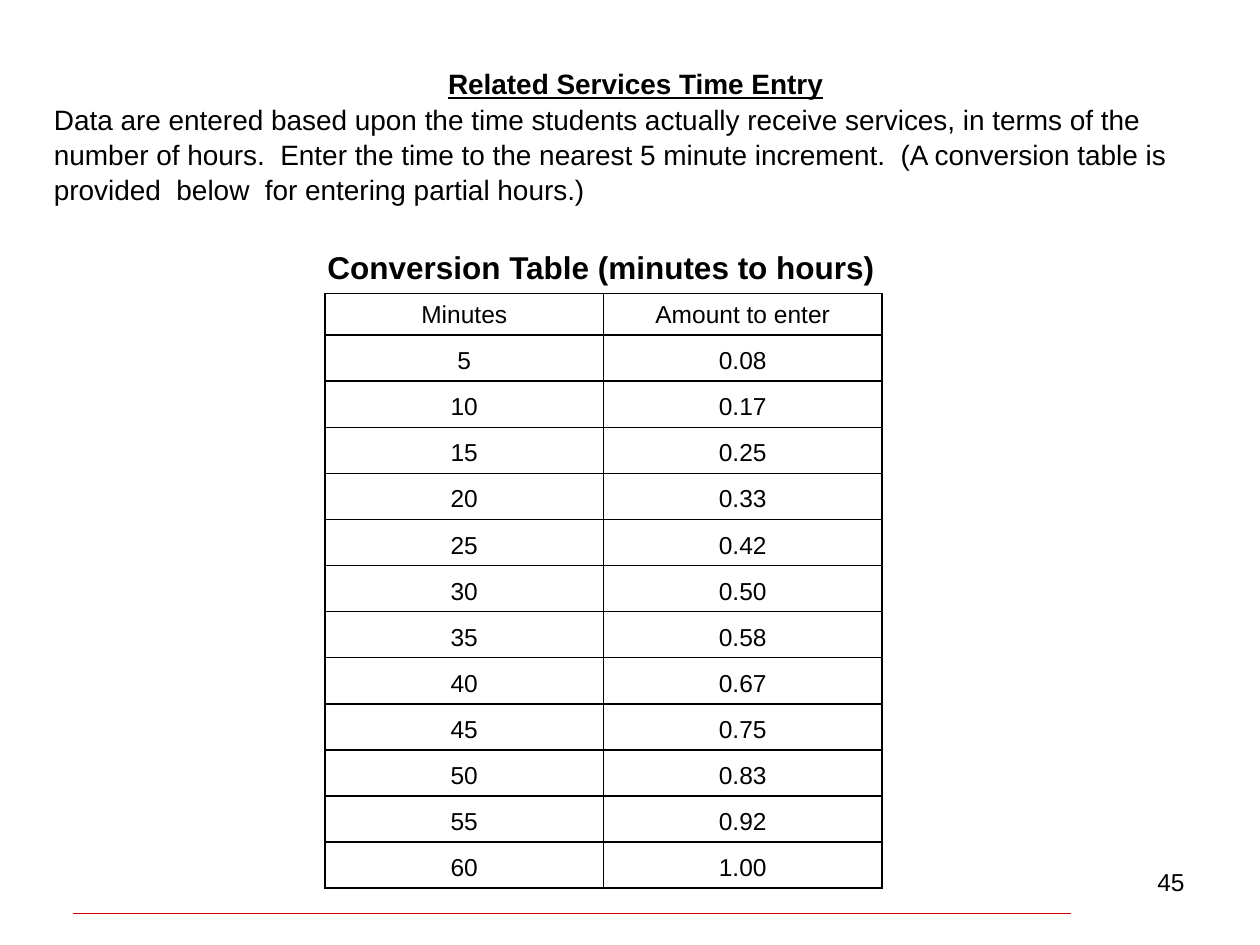
from dataclasses import dataclass

from lxml.etree import SubElement
from pptx import Presentation
from pptx.dml.color import RGBColor
from pptx.enum.shapes import MSO_CONNECTOR
from pptx.enum.text import MSO_ANCHOR, PP_ALIGN
from pptx.oxml.ns import qn
from pptx.util import Inches, Pt

COLORS = {"text": "000000", "border": "000000", "rule": "CC0000"}
FONT = "Arial"
BORDER_WIDTH = Pt(1)

TABLE_LEFT, TABLE_TOP, TABLE_WIDTH, TABLE_HEIGHT = 2.58, 2.33, 4.42, 4.72
HEADER_HEIGHT = 0.33
HEADERS = ("Minutes", "Amount to enter")


@dataclass
class Line:
    text: str
    size: int
    align: PP_ALIGN = PP_ALIGN.LEFT
    bold: bool = False
    underline: bool = False
    spacing: float = 1.0


@dataclass
class Box:
    left: float
    top: float
    width: float
    height: float
    lines: list[Line]
    wrap: bool = True


BOXES = [
    # Heading and instructions
    Box(0.33, 0.47, 9.43, 1.4, [
        Line("Related Services Time Entry", 16, PP_ALIGN.CENTER, True, True, 1.05),
        Line("Data are entered based upon the time students actually receive services, "
             "in terms of the number of hours.  Enter the time to the nearest 5 minute "
             "increment.  (A conversion table is provided  below  for entering partial "
             "hours.)", 16, spacing=1.05),
    ]),
    # Table caption
    Box(2.5, 1.92, 4.59, 0.4,
        [Line("Conversion Table (minutes to hours)", 18, bold=True)], wrap=False),
    # Page number
    Box(7.17, 6.83, 2.33, 0.52, [Line("45", 14, PP_ALIGN.RIGHT)]),
]


def write_line(paragraph, line: Line) -> None:
    paragraph.alignment = line.align
    paragraph.line_spacing = line.spacing
    run = paragraph.add_run()
    run.text = line.text
    font_format = {"name": FONT, "size": Pt(line.size), "bold": line.bold,
                   "underline": line.underline}
    for attribute, value in font_format.items():
        setattr(run.font, attribute, value)
    run.font.color.rgb = RGBColor.from_string(COLORS["text"])


def add_box(slide, box: Box) -> None:
    shape = slide.shapes.add_textbox(Inches(box.left), Inches(box.top),
                                     Inches(box.width), Inches(box.height))
    frame = shape.text_frame
    frame.word_wrap = box.wrap
    for index, line in enumerate(box.lines):
        paragraph = frame.add_paragraph() if index else frame.paragraphs[0]
        write_line(paragraph, line)


def add_borders(cell) -> None:
    properties = cell._tc.get_or_add_tcPr()
    for side in ("a:lnL", "a:lnR", "a:lnT", "a:lnB"):
        border = SubElement(properties, qn(side), w=str(BORDER_WIDTH))
        fill = SubElement(border, qn("a:solidFill"))
        SubElement(fill, qn("a:srgbClr"), val=COLORS["border"])


def add_conversion_table(slide) -> None:
    rows = [HEADERS] + [(str(minutes), f"{minutes / 60:.2f}")
                        for minutes in range(5, 61, 5)]
    table = slide.shapes.add_table(
        len(rows), len(HEADERS), Inches(TABLE_LEFT), Inches(TABLE_TOP),
        Inches(TABLE_WIDTH), Inches(TABLE_HEIGHT)).table
    table.first_row = table.horz_banding = False
    body_height = (TABLE_HEIGHT - HEADER_HEIGHT) / (len(rows) - 1)
    for row_index, values in enumerate(rows):
        table.rows[row_index].height = Inches(body_height if row_index else HEADER_HEIGHT)
        for column_index, value in enumerate(values):
            cell = table.cell(row_index, column_index)
            cell.vertical_anchor = MSO_ANCHOR.BOTTOM
            add_borders(cell)
            cell.fill.background()
            write_line(cell.text_frame.paragraphs[0], Line(value, 14, PP_ALIGN.CENTER))


def add_footer_rule(slide) -> None:
    rule = slide.shapes.add_connector(MSO_CONNECTOR.STRAIGHT, Inches(0.58), Inches(7.25),
                                      Inches(8.5), Inches(7.25))
    rule.line.color.rgb = RGBColor.from_string(COLORS["rule"])
    rule.line.width = Pt(0.75)
    SubElement(rule._element.spPr, qn("a:effectLst"))


def main() -> None:
    presentation = Presentation()
    presentation.slide_width, presentation.slide_height = Inches(10), Inches(7.5)
    slide = presentation.slides.add_slide(presentation.slide_layouts[6])
    add_footer_rule(slide)
    add_conversion_table(slide)
    for box in BOXES:
        add_box(slide, box)
    presentation.save("out.pptx")


if __name__ == "__main__":
    main()
